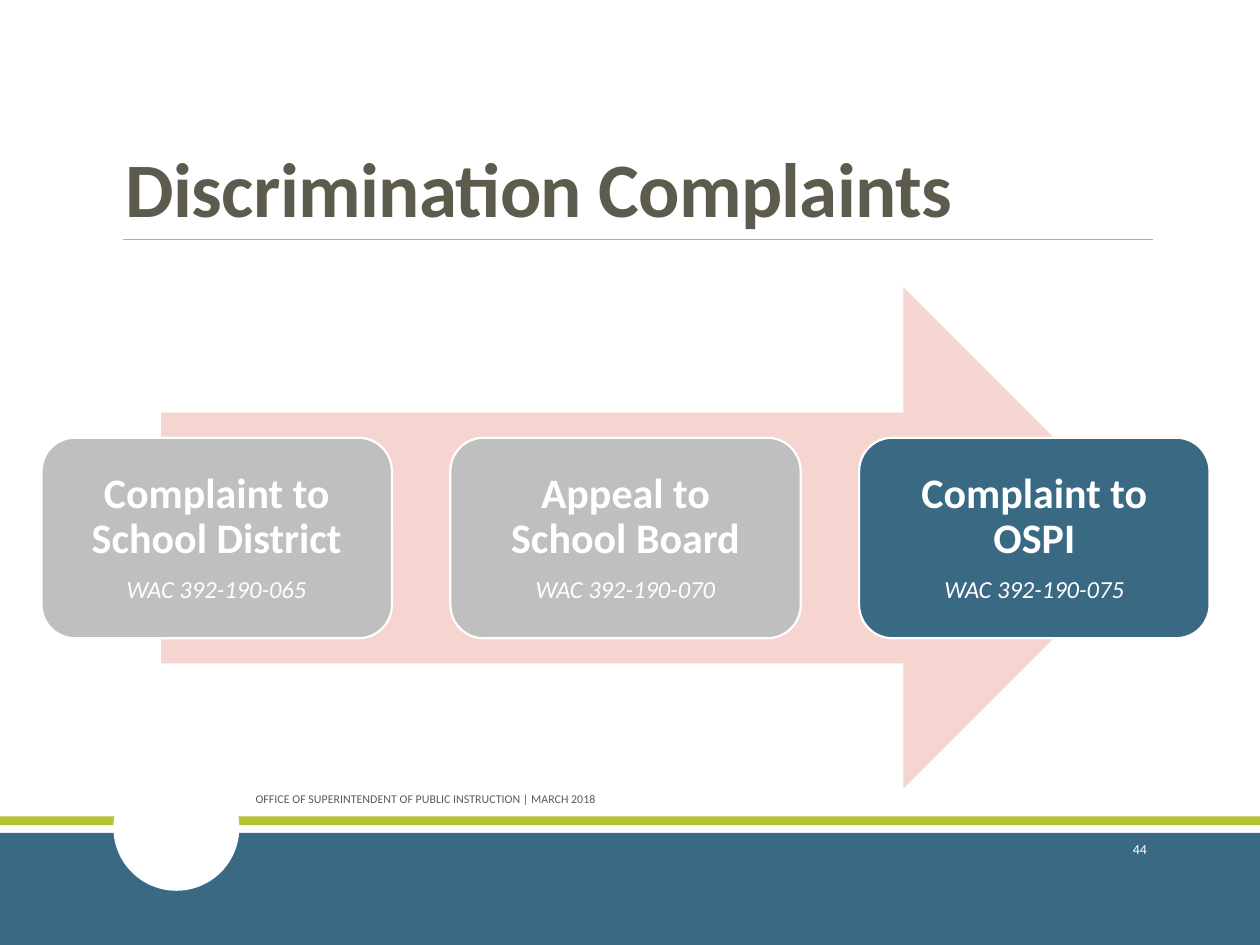
"""Build the discrimination complaints slide."""
from lxml import etree
from pptx import Presentation, util as u
from pptx.dml.color import RGBColor
from pptx.enum import shapes, text
from pptx.oxml import ns

COLORS = {"blue": "3A6983", "green": "B7C333", "gray": "BFBFBF", "pink": "F6D4CF",
          "ink": "5D5B4E", "rule": "B2B0A3", "white": "FFFFFF"}
CELL = u.Inches(0.1)
COLUMNS, ROWS = 100, 75
STEPS = [("Complaint to School District", "WAC 392-190-065", "gray"),
         ("Appeal to\vSchool Board", "WAC 392-190-070", "gray"),
         ("Complaint to OSPI", "WAC 392-190-075", "blue")]


def color(name):
    """Return a named colour."""
    return RGBColor.from_string(COLORS[name])


def grid(*cells):
    """Turn columns and rows into lengths."""
    return [round(cell * CELL) for cell in cells]


def add_shape(page, kind, box, fill, line=None):
    """Draw a flat preset shape in a box of grid cells."""
    shape = page.shapes.add_shape(kind, *grid(*box))
    shape.shadow.inherit = False
    shape.fill.solid()
    shape.fill.fore_color.rgb = color(fill)
    if line:
        shape.line.color.rgb = color(line)
        shape.line.width = u.Pt(1.25)
    else:
        shape.line.fill.background()
    return shape


def set_font(para, size, ink, bold=False, italic=False):
    """Set the font of a whole paragraph."""
    font = para.font
    font.name, font.size, font.bold, font.italic = "Calibri", u.Pt(size), bold, italic
    font.color.rgb = color(ink)


def add_label(page, box, words, size, ink, anchor=text.MSO_ANCHOR.MIDDLE,
              align=text.PP_ALIGN.LEFT, bold=False):
    """Place a one-paragraph text box and return its paragraph."""
    frame = page.shapes.add_textbox(*grid(*box)).text_frame
    frame.word_wrap = True
    frame.vertical_anchor = anchor
    para = frame.paragraphs[0]
    para.text = words
    para.alignment = align
    set_font(para, size, ink, bold)
    return para


def add_footer(page, box):
    """Draw the bands, the notch, the footer text and the page number."""
    left, top, width, height = box
    kinds = shapes.MSO_SHAPE
    add_shape(page, kinds.RECTANGLE, (left, top, width, 0.7), "green")
    add_shape(page, kinds.RECTANGLE, (left, top + 1.3, width, height - 1.3), "blue")
    add_shape(page, kinds.OVAL, (left + 9, top - 4.1, 10, 10), "white")
    add_label(page, (left + 19.3, top - 3.4, 39.6, 4),
              "OFFICE OF SUPERINTENDENT OF PUBLIC INSTRUCTION | MARCH 2018", 6.8, "ink")
    add_label(page, (left + 81.2, top + 0.6, 10.8, 4), "44", 7.9, "white",
              align=text.PP_ALIGN.RIGHT)


def add_title(page, box):
    """Place the title above a thin rule."""
    left, top, width, height = box
    para = add_label(page, box, "Discrimination Complaints", 44, "ink",
                     text.MSO_ANCHOR.BOTTOM, bold=True)
    para.line_spacing = 0.85
    para.runs[0].font._element.set("spc", "-40")
    bottom = top + height
    rule = page.shapes.add_connector(shapes.MSO_CONNECTOR.STRAIGHT,
                                     *grid(left + 0.8, bottom, left + width, bottom))
    rule.line.color.rgb = color("rule")
    rule.line.width = u.Pt(0.5)
    etree.SubElement(rule._element.spPr, ns.qn("a:effectLst"))


def add_step(page, box, heading, rule, fill):
    """Draw one step with its heading and the rule it rests on."""
    card = add_shape(page, shapes.MSO_SHAPE.ROUNDED_RECTANGLE, box, fill, "white")
    frame = card.text_frame
    frame.word_wrap = True
    frame.vertical_anchor = text.MSO_ANCHOR.MIDDLE
    frame.text = f"{heading}\n{rule}"
    for para, size, is_heading in zip(frame.paragraphs, (24, 14), (True, False)):
        para.alignment = text.PP_ALIGN.CENTER
        para.line_spacing = 0.9
        para.space_after = u.Pt(0.35 * size)
        set_font(para, size, "white", is_heading, not is_heading)


def add_process(page, box):
    """Draw the arrow and spread the steps evenly across the box."""
    left, top, width, height = box
    add_shape(page, shapes.MSO_SHAPE.RIGHT_ARROW,
              (left + 9.5, top, width * 0.85, height), "pink")
    card_width, card_height = width * 0.3, height * 0.4
    pitch = (width - card_width) / (len(STEPS) - 1)
    for index, step in enumerate(STEPS):
        add_step(page, (left + index * pitch, top + height * 0.3, card_width, card_height),
                 *step)


def main():
    """Build and save the deck."""
    deck = Presentation()
    deck.slide_width, deck.slide_height = grid(COLUMNS, ROWS)
    page = deck.slides.add_slide(deck.slide_layouts[6])
    add_footer(page, (0, 64.8, COLUMNS, ROWS - 64.8))
    add_title(page, (9, 3.1, 82.5, 15.9))
    add_process(page, (3.3, 22.8, 92.7, 39.8))
    deck.save("out.pptx")


if __name__ == "__main__":
    main()
